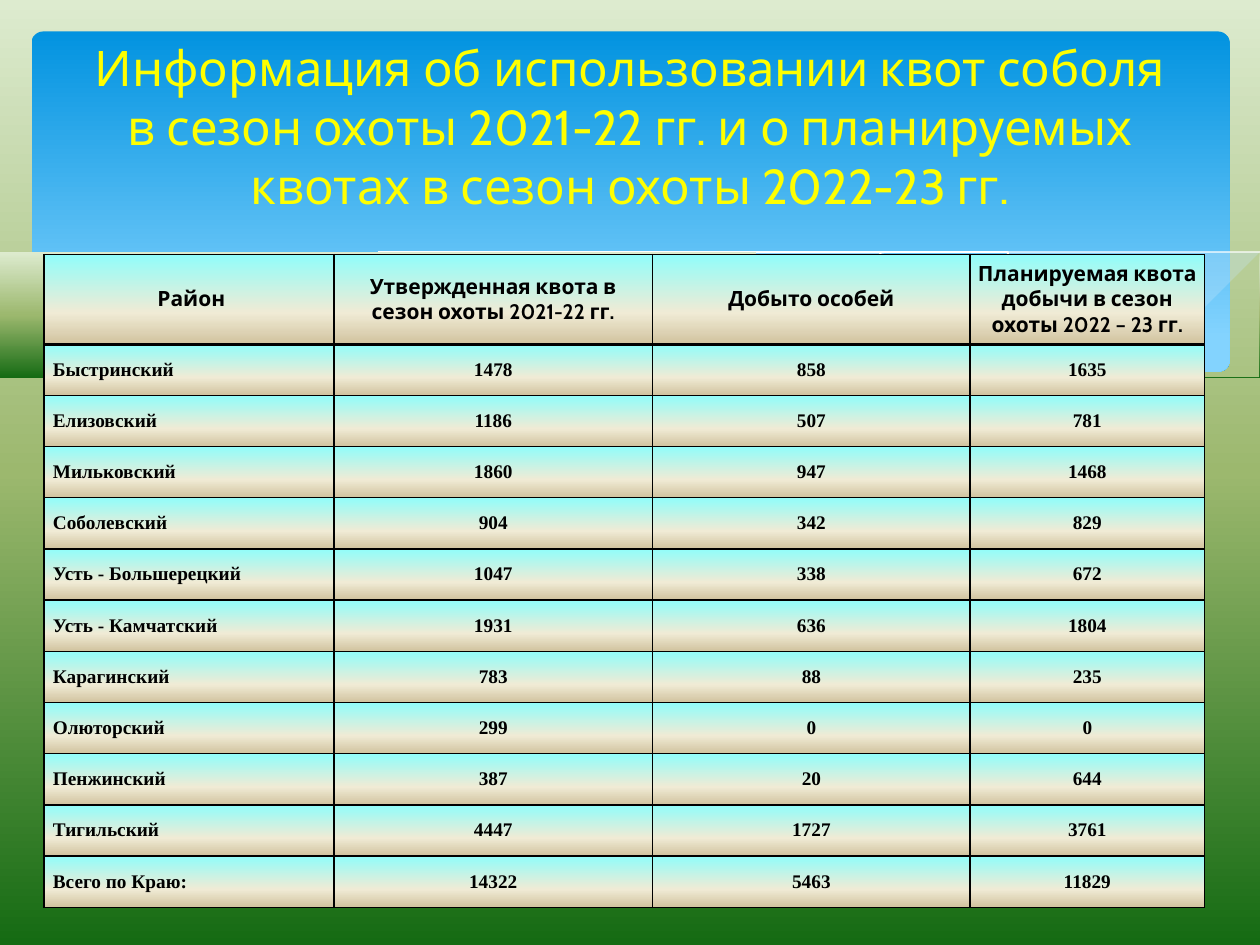
from lxml.etree import SubElement
from pptx import Presentation
from pptx.dml.color import RGBColor
from pptx.enum.shapes import MSO_SHAPE
from pptx.enum.text import MSO_ANCHOR, PP_ALIGN
from pptx.oxml.ns import qn
from pptx.util import Inches, Pt

BLACK = RGBColor(0x00, 0x00, 0x00)
WHITE = RGBColor(0xFF, 0xFF, 0xFF)
YELLOW = RGBColor(0xFF, 0xFF, 0x00)
PALE_BLUE = RGBColor(0xC6, 0xE7, 0xFC)
MEADOW = [(0, RGBColor(0xDD, 0xEB, 0xCF)), (50, RGBColor(0x9C, 0xB8, 0x6E)),
          (100, RGBColor(0x15, 0x6B, 0x13))]
SKY = [(0, RGBColor(0x02, 0x93, 0xE0)), (90, RGBColor(0x83, 0xD3, 0xFE))]
SAND = [(0, RGBColor(0x91, 0xFD, 0xFA)), (65, RGBColor(0xF0, 0xEB, 0xD5)),
        (100, RGBColor(0xD1, 0xC3, 0x9F))]

TITLE = ("Информация об использовании квот соболя в сезон охоты 2021-22 гг. "
         "и о планируемых квотах в сезон охоты 2022-23 гг.")
HEADERS = [" Район", "Утвержденная квота в сезон охоты 2021-22 гг.", "Добыто особей",
           "Планируемая квота добычи в сезон охоты 2022 – 23 гг."]
DISTRICTS = [
    ("Быстринский", 1478, 858, 1635),
    ("Елизовский", 1186, 507, 781),
    ("Мильковский", 1860, 947, 1468),
    ("Соболевский", 904, 342, 829),
    ("Усть - Большерецкий", 1047, 338, 672),
    ("Усть - Камчатский", 1931, 636, 1804),
    ("Карагинский", 783, 88, 235),
    ("Олюторский", 299, 0, 0),
    ("Пенжинский", 387, 20, 644),
    ("Тигильский", 4447, 1727, 3761),
    ("Всего по Краю:", 14322, 5463, 11829),
]
COLUMN_WIDTHS = [2.3, 2.53, 2.52, 1.86]
HEADER_HEIGHT = 0.71
BODY_HEIGHT = 4.47

RIGHT_WAVE = [
    (9.76, 2), (9.48, 2.04), (9.21, 2.1), (8.91, 2.16), (8.61, 2.23), (8.05, 2.37),
    (7.53, 2.48), (7.06, 2.57), (6.61, 2.65), (6.91, 2.69), (7.32, 2.74), (7.69, 2.77),
    (8.14, 2.78), (8.54, 2.76), (8.89, 2.72), (9.21, 2.65), (9.49, 2.57), (9.76, 2.47)]
MIDDLE_WAVE = [
    (8.93, 2.73), (8.37, 2.65), (7.75, 2.54), (7.06, 2.4), (6.29, 2.22), (5.84, 2.11),
    (5.41, 2.03), (5.02, 1.96), (4.65, 1.91), (4.2, 1.87), (3.8, 1.85), (3.44, 1.86),
    (3.13, 1.88), (2.86, 1.91), (3.23, 1.96), (3.62, 2.03), (4.04, 2.11), (4.49, 2.22),
    (5.3, 2.4), (5.84, 2.52), (6.34, 2.61), (6.8, 2.68), (7.22, 2.74), (7.61, 2.77),
    (8.07, 2.78), (8.48, 2.77), (8.93, 2.73)]
LONG_CREST = [
    (3.09, 1.95), (3.28, 1.92), (3.53, 1.89), (3.87, 1.87), (4.16, 1.87), (4.5, 1.88),
    (4.89, 1.9), (5.33, 1.94), (5.82, 2), (6.36, 2.08), (6.95, 2.19), (7.6, 2.33),
    (8.31, 2.51), (9.07, 2.72)]
SHORT_CREST = [
    (6.13, 2.57), (6.53, 2.46), (6.95, 2.35), (7.48, 2.23), (8.06, 2.1), (8.66, 1.99),
    (8.95, 1.94), (9.24, 1.9), (9.51, 1.87), (9.75, 1.85)]
FRONT_HILL = [
    (9.77, 2.46), (9.5, 2.56), (9.2, 2.65), (8.87, 2.71), (8.5, 2.75), (8.09, 2.77),
    (7.61, 2.75), (7.08, 2.7), (6.48, 2.62), (5.79, 2.5), (5.03, 2.33), (4.47, 2.2),
    (3.91, 2.07), (3.4, 1.97), (2.92, 1.9), (2.5, 1.86), (2.11, 1.84), (1.77, 1.84),
    (1.46, 1.85), (1.19, 1.87), (0.95, 1.91), (0.76, 1.95), (0.59, 1.99), (0.46, 2.03),
    (0.36, 2.07), (0.23, 2.13), (0.23, 3.29), (9.77, 3.29)]


def paint_gradient(fill, owner, stops):
    """Fill the owner element from top to bottom with the given colour stops."""
    fill.gradient()
    fill.gradient_angle = 270
    stop_list = next(owner.iter(qn("a:gsLst")))
    for old_stop in list(stop_list):
        stop_list.remove(old_stop)
    for percent, color in stops:
        stop = SubElement(stop_list, qn("a:gs"), pos=str(percent * 1000))
        SubElement(stop, qn("a:srgbClr"), val=str(color))


def add_outline(page, points, close):
    """Add a freeform through the points, without shadow, fill or line."""
    builder = page.shapes.build_freeform(*points[0], scale=Inches(1))
    builder.add_line_segments(points[1:], close=close)
    outline = builder.convert_to_shape()
    outline.shadow.inherit = False
    outline.fill.background()
    outline.line.fill.background()
    return outline


def add_wave(page, points, opacity):
    """Add a translucent pale wave."""
    wave = add_outline(page, points, True)
    wave.fill.solid()
    wave.fill.fore_color.rgb = PALE_BLUE
    color = next(wave._element.spPr.iter(qn("a:srgbClr")))
    SubElement(color, qn("a:alpha"), val=str(opacity * 1000))


def add_crest(page, points):
    """Add a white hairline along a wave."""
    crest = add_outline(page, points, False)
    crest.line.color.rgb = WHITE
    crest.line.width = Pt(0)


def add_banner(page):
    """Add the blue panel with its waves and the green hill in front."""
    panel = page.shapes.add_shape(MSO_SHAPE.ROUNDED_RECTANGLE, Inches(0.25), Inches(0.25),
                                  Inches(9.51), Inches(2.7))
    panel.adjustments[0] = 0.034
    panel.shadow.inherit = False
    panel.line.fill.background()
    paint_gradient(panel.fill, panel._element, SKY)
    add_wave(page, RIGHT_WAVE, 29)
    add_wave(page, MIDDLE_WAVE, 40)
    add_crest(page, LONG_CREST)
    add_crest(page, SHORT_CREST)
    hill = add_outline(page, FRONT_HILL, True)
    paint_gradient(hill.fill, hill._element, MEADOW)


def write_text(frame, text, font_name, size, color, bold, alignment):
    """Write one formatted run into the first paragraph of the frame."""
    paragraph = frame.paragraphs[0]
    paragraph.alignment = alignment
    span = paragraph.add_run()
    span.text = text
    span.font.name = font_name
    span.font.size = Pt(size)
    span.font.color.rgb = color
    span.font.bold = bold


def add_title(page):
    """Add the centred yellow title."""
    box = page.shapes.add_textbox(Inches(0.5), Inches(0.3), Inches(9), Inches(1.4))
    box.text_frame.word_wrap = True
    box.text_frame.vertical_anchor = MSO_ANCHOR.MIDDLE
    write_text(box.text_frame, TITLE, "Cabin", 28, YELLOW, False, PP_ALIGN.CENTER)


def set_borders(cell, top, bottom):
    """Draw black borders, with top and bottom widths in points."""
    properties = cell._tc.get_or_add_tcPr()
    for side, width in (("L", 1), ("R", 1), ("T", top), ("B", bottom)):
        line = SubElement(properties, qn(f"a:ln{side}"), w=str(Pt(width)))
        fill = SubElement(line, qn("a:solidFill"))
        SubElement(fill, qn("a:srgbClr"), val=str(BLACK))


def fill_cell(cell, text, row, column):
    """Format one table cell by its place and write its text."""
    is_header = row == 0
    set_borders(cell, 2 if row == 1 else 1, 2 if is_header else 1)
    paint_gradient(cell.fill, cell._tc, SAND)
    cell.vertical_anchor = MSO_ANCHOR.MIDDLE
    cell.margin_left = cell.margin_right = Inches(0.05 if is_header else 0.07)
    cell.margin_top = cell.margin_bottom = Inches(0.05 if is_header else 0)
    font_name, size = ("Cabin", 12) if is_header else ("Times New Roman", 11)
    alignment = PP_ALIGN.CENTER if is_header or column else PP_ALIGN.LEFT
    write_text(cell.text_frame, text, font_name, size, BLACK, True, alignment)


def add_quota_table(page):
    """Add the table of quotas by district."""
    rows = [HEADERS, *DISTRICTS]
    table = page.shapes.add_table(
        len(rows), len(HEADERS), Inches(0.35), Inches(2.02),
        Inches(sum(COLUMN_WIDTHS)), Inches(HEADER_HEIGHT + BODY_HEIGHT)).table
    for column, width in zip(table.columns, COLUMN_WIDTHS):
        column.width = Inches(width)
    for row_index, values in enumerate(rows):
        height = BODY_HEIGHT / len(DISTRICTS) if row_index else HEADER_HEIGHT
        table.rows[row_index].height = Inches(height)
        for column_index, value in enumerate(values):
            fill_cell(table.cell(row_index, column_index), str(value), row_index, column_index)


def main():
    """Build the slide on sable quotas."""
    deck = Presentation()
    deck.slide_width, deck.slide_height = Inches(10), Inches(7.5)
    page = deck.slides.add_slide(deck.slide_layouts[6])
    paint_gradient(page.background.fill, page._element, MEADOW)
    add_banner(page)
    add_quota_table(page)
    add_title(page)
    deck.save("out.pptx")


if __name__ == "__main__":
    main()
